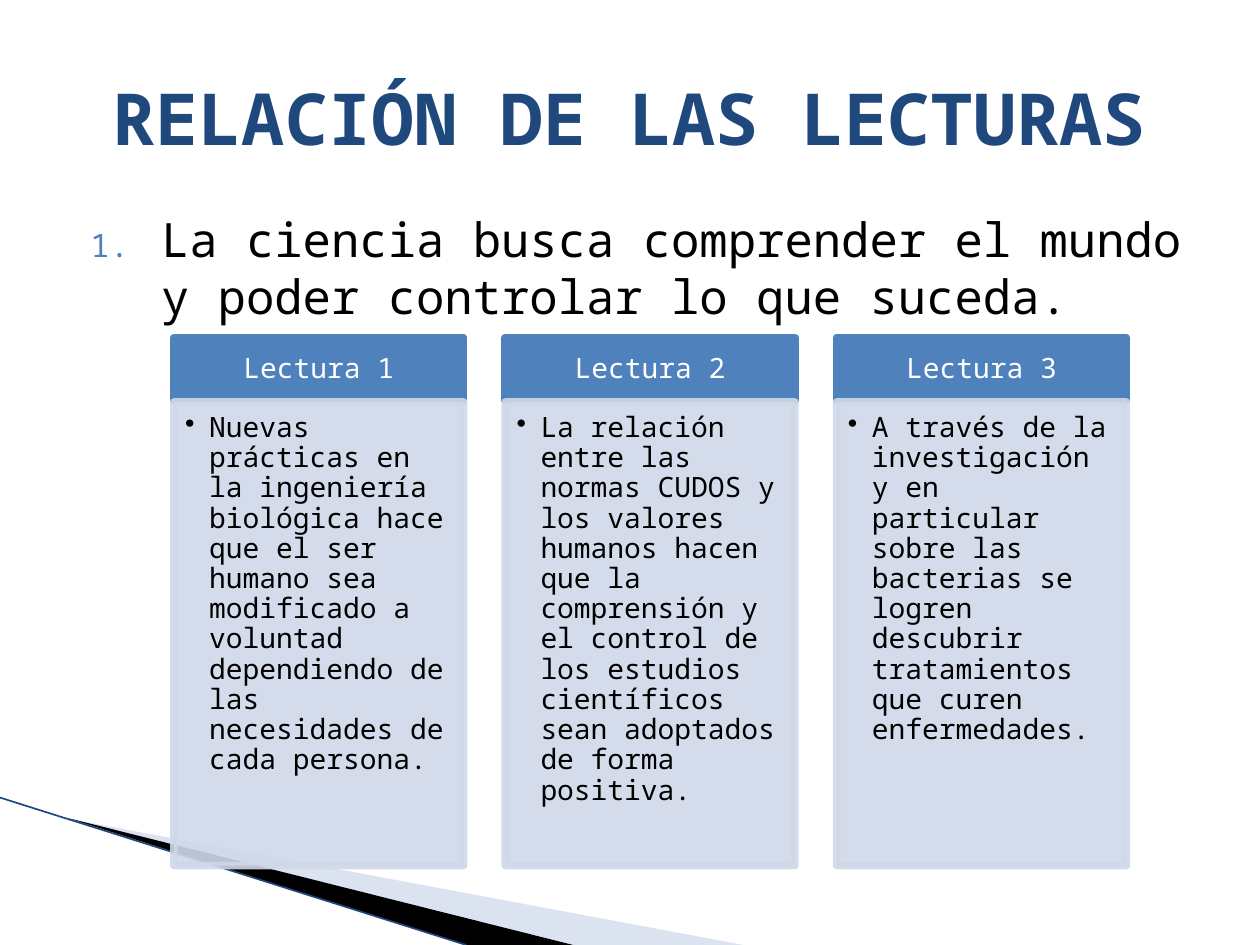
from dataclasses import dataclass

import lxml.etree
import pptx
import pptx.dml.color
import pptx.enum.shapes
import pptx.enum.text
import pptx.oxml.ns
import pptx.util

Inches = pptx.util.Inches
Align = pptx.enum.text.PP_ALIGN
Anchor = pptx.enum.text.MSO_ANCHOR
FONT = "Noto Sans Mono"
BLUE, NAVY, PALE, BLACK, WHITE = "4F81BD", "1F497D", "D0D8E8", "000000", "FFFFFF"


@dataclass
class Reading:
    heading: str
    summary: str


@dataclass
class Wedge:
    points: list[tuple[float, float]]
    color: str
    opacity: int = 100


READINGS = [
    Reading("Lectura 1", "Nuevas prácticas en la ingeniería biológica hace que el ser humano sea "
            "modificado a voluntad dependiendo de las necesidades de cada persona."),
    Reading("Lectura 2", "La relación entre las normas CUDOS y los valores humanos hacen que la "
            "comprensión y el control de los estudios científicos sean adoptados de forma positiva."),
    Reading("Lectura 3", "A través de la investigación y en particular sobre las bacterias se "
            "logren descubrir tratamientos que curen enfermedades."),
]
WEDGES = [
    Wedge([(0.55, 6.5), (5.9, 7.5), (4.56, 7.5)], "A7B9DB", 40),
    Wedge([(0.53, 6.49), (4.55, 7.5), (3.7, 7.5)], BLACK),
]
CARD_LEFT, CARD_STEP, CARD_WIDTH = 1.38, 2.63, 2.3


def add_element(parent, tag: str, **attributes):
    return lxml.etree.SubElement(
        parent, pptx.oxml.ns.qn(tag), {key: str(value) for key, value in attributes.items()})


def set_color(color_format, value: str) -> None:
    color_format.rgb = pptx.dml.color.RGBColor.from_string(value)


def paint(fill, color: str, opacity: int = 100) -> None:
    fill.solid()
    set_color(fill.fore_color, color)
    if opacity < 100:
        solid = fill._xPr.find(pptx.oxml.ns.qn("a:solidFill"))
        add_element(solid[0], "a:alpha", val=opacity * 1000)


def write_text(box, text: str, *, size: float, color: str, bold: bool = False,
               align=Align.LEFT, anchor=Anchor.TOP, spacing: float = 1.0,
               insets=(0.1, 0.05, 0.1, 0.05), indent=(0, 0),
               bullet: str = "", number: str = "") -> None:
    frame = box.text_frame
    frame.word_wrap = True
    frame.vertical_anchor = anchor
    frame.margin_left, frame.margin_top, frame.margin_right, frame.margin_bottom = map(Inches, insets)
    para = frame.paragraphs[0]
    properties = para._p.get_or_add_pPr()
    if bullet or number:
        properties.set("marL", str(Inches(indent[0])))
        properties.set("indent", str(Inches(indent[1])))
    if bullet:
        add_element(properties, "a:buChar", char=bullet)
    if number:
        add_element(add_element(properties, "a:buClr"), "a:srgbClr", val=BLUE)
        add_element(properties, "a:buSzPct", val=68000)
        add_element(properties, "a:buFont", typeface=FONT)
        add_element(properties, "a:buAutoNum", type=number)
    para.alignment = align
    para.line_spacing = spacing
    span = para.add_run()
    span.text = text
    span.font.name = FONT
    span.font.size = pptx.util.Pt(size)
    span.font.bold = bold
    set_color(span.font.color, color)


def add_text(page, left: float, top: float, width: float, height: float, text: str, **style) -> None:
    box = page.shapes.add_textbox(Inches(left), Inches(top), Inches(width), Inches(height))
    write_text(box, text, **style)


def add_panel(page, left: float, top: float, height: float, color: str, opacity: int = 100):
    panel = page.shapes.add_shape(
        pptx.enum.shapes.MSO_SHAPE.RECTANGLE,
        Inches(left), Inches(top), Inches(CARD_WIDTH), Inches(height))
    panel.shadow.inherit = False
    paint(panel.fill, color, opacity)
    panel.line.width = pptx.util.Pt(4.33)
    paint(panel.line.fill, color, opacity)
    add_element(panel.line._get_or_add_ln(), "a:round")
    return panel


def add_card(page, left: float, reading: Reading) -> None:
    header = add_panel(page, left, 2.68, 0.5, BLUE)
    write_text(header, reading.heading, size=16, color=WHITE, align=Align.CENTER,
               anchor=Anchor.MIDDLE, spacing=0.9, insets=(0.12, 0.07, 0.12, 0.07))
    body = add_panel(page, left, 3.19, 3.68, PALE, 90)
    write_text(body, reading.summary, size=16, color=BLACK, spacing=0.9,
               insets=(0.09, 0.09, 0.12, 0.14), indent=(0.19, -0.19), bullet="•")


def add_wedge(page, wedge: Wedge) -> None:
    start, *rest = [(Inches(x), Inches(y)) for x, y in wedge.points]
    builder = page.shapes.build_freeform(*start)
    builder.add_line_segments(rest, close=True)
    shape = builder.convert_to_shape()
    shape.shadow.inherit = False
    paint(shape.fill, wedge.color, wedge.opacity)
    shape.line.fill.background()


def add_edge(page) -> None:
    edge = page.shapes.add_connector(
        pptx.enum.shapes.MSO_CONNECTOR.STRAIGHT,
        Inches(0), Inches(6.33), Inches(3.7), Inches(7.5))
    edge.line.width = pptx.util.Pt(0.95)
    paint(edge.line.fill, NAVY)
    add_element(edge._element.spPr, "a:effectLst")


def main() -> None:
    deck = pptx.Presentation()
    deck.slide_width, deck.slide_height = Inches(10), Inches(7.5)
    page = deck.slides.add_slide(deck.slide_layouts[6])
    for wedge in WEDGES:
        add_wedge(page, wedge)
    add_edge(page)
    add_text(page, 0.5, 1.62, 9, 1, "La ciencia busca comprender el mundo y poder controlar lo que suceda.",
             size=27, color=BLACK, indent=(0.68, -0.56), number="arabicPeriod")
    add_text(page, 0.5, 0.3, 9, 1.25, "RELACIÓN DE LAS LECTURAS", size=41, color=NAVY,
             bold=True, align=Align.CENTER, anchor=Anchor.MIDDLE)
    for index, reading in enumerate(READINGS):
        add_card(page, CARD_LEFT + index * CARD_STEP, reading)
    deck.save("out.pptx")


if __name__ == "__main__":
    main()
